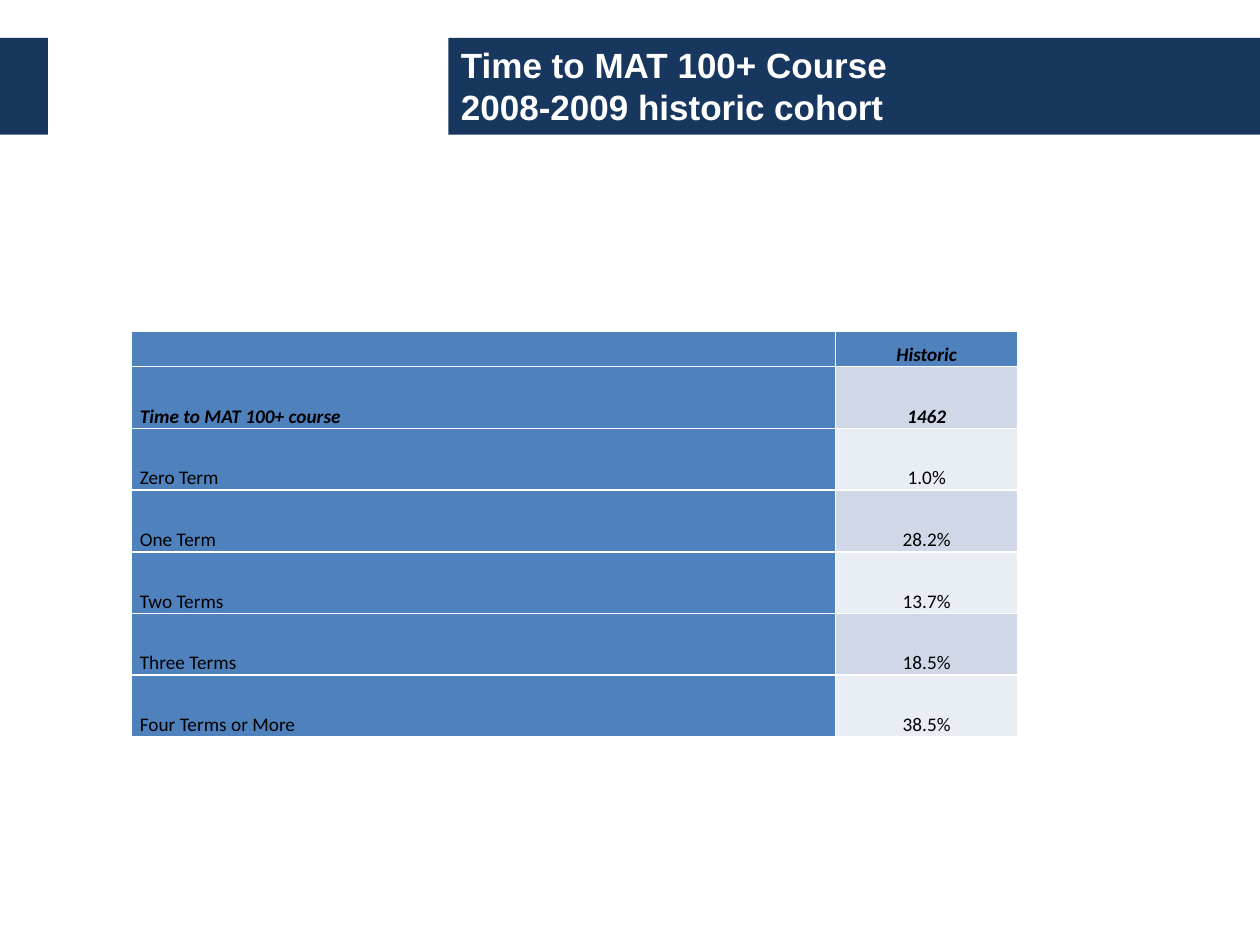
from dataclasses import dataclass

import pptx
import pptx.dml.color
import pptx.enum.shapes
import pptx.enum.text
import pptx.oxml.ns
import pptx.util
from lxml import etree

Inches = pptx.util.Inches
Pt = pptx.util.Pt
Align = pptx.enum.text.PP_ALIGN
Anchor = pptx.enum.text.MSO_ANCHOR
qn = pptx.oxml.ns.qn

COLORS = {
    "navy": "17375E",
    "blue": "4F81BD",
    "dark": "D0D8E8",
    "light": "E9EDF4",
    "white": "FFFFFF",
    "black": "000000",
}


@dataclass
class Bar:
    left: float
    width: float


@dataclass
class Row:
    label: str
    value: str
    strong: bool = False


BARS = [Bar(3.56, 6.44), Bar(0, 0.38)]
ROWS = [
    Row("", "Historic", True),
    Row("Time to MAT 100+ course", "1462", True),
    Row("Zero Term", "1.0%"),
    Row("One Term", "28.2%"),
    Row("Two Terms", "13.7%"),
    Row("Three Terms", "18.5%"),
    Row("Four Terms or More", "38.5%"),
]
WIDTHS = [5.59, 1.45]
HEAD, BODY = 0.28, 0.49


def color(name: str) -> pptx.dml.color.RGBColor:
    return pptx.dml.color.RGBColor.from_string(COLORS[name])


def draw_bar(slide, bar: Bar) -> None:
    shape = slide.shapes.add_shape(
        pptx.enum.shapes.MSO_SHAPE.RECTANGLE,
        Inches(bar.left), Inches(0.3), Inches(bar.width), Inches(0.77))
    shape.shadow.inherit = False
    shape.fill.solid()
    shape.fill.fore_color.rgb = color("navy")
    shape.line.fill.background()


def draw_title(slide, text: str) -> None:
    box = slide.shapes.add_textbox(
        Inches(3.56), Inches(0.18), Inches(5.86), Inches(1))
    frame = box.text_frame
    frame.word_wrap = True
    frame.vertical_anchor = Anchor.MIDDLE
    frame.text = text
    for run in frame.paragraphs[0].runs:
        run.font.name = "Arial"
        run.font.size = Pt(20)
        run.font.bold = True
        run.font.color.rgb = color("white")


def add_edges(cell) -> None:
    """Put white borders ahead of the cell's fill."""
    props = cell._tc.get_or_add_tcPr()
    for index, side in enumerate(("lnL", "lnR", "lnT", "lnB")):
        line = etree.Element(qn(f"a:{side}"), w=str(Pt(1)))
        fill = etree.SubElement(line, qn("a:solidFill"))
        etree.SubElement(fill, qn("a:srgbClr"), val=COLORS["white"])
        props.insert(index, line)


def fill_cell(cell, text: str, fill: str, align, strong: bool) -> None:
    cell.fill.solid()
    cell.fill.fore_color.rgb = color(fill)
    add_edges(cell)
    cell.margin_left = cell.margin_right = Inches(0.07)
    cell.margin_top = cell.margin_bottom = 0
    cell.vertical_anchor = Anchor.BOTTOM
    cell.text_frame.text = text
    para = cell.text_frame.paragraphs[0]
    para.alignment = align
    para.line_spacing = 1.15
    for run in para.runs:
        run.font.name = "Calibri"
        run.font.size = Pt(11)
        run.font.bold = run.font.italic = strong
        run.font.color.rgb = color("black")
    if not text:
        # Keep the empty cell from stretching its row
        etree.SubElement(para._p, qn("a:endParaRPr"), sz="1100")


def draw_table(slide, rows: list[Row]) -> None:
    height = HEAD + BODY * (len(rows) - 1)
    table = slide.shapes.add_table(
        len(rows), len(WIDTHS), Inches(1.04), Inches(2.63),
        Inches(sum(WIDTHS)), Inches(height)).table
    for column, width in zip(table.columns, WIDTHS):
        column.width = Inches(width)
    for index, row in enumerate(rows):
        table.rows[index].height = Inches(BODY if index else HEAD)
        band = "dark" if index % 2 else "light"
        fill_cell(table.cell(index, 0), row.label, "blue",
                  Align.LEFT, row.strong)
        fill_cell(table.cell(index, 1), row.value, band if index else "blue",
                  Align.CENTER, row.strong)


def main() -> None:
    deck = pptx.Presentation()
    deck.slide_width = Inches(10)
    deck.slide_height = Inches(7.5)
    slide = deck.slides.add_slide(deck.slide_layouts[6])

    # Header band
    for bar in BARS:
        draw_bar(slide, bar)
    draw_title(slide, "Time to MAT 100+ Course\v2008-2009 historic cohort")

    # Cohort table
    draw_table(slide, ROWS)

    deck.save("out.pptx")


if __name__ == "__main__":
    main()
